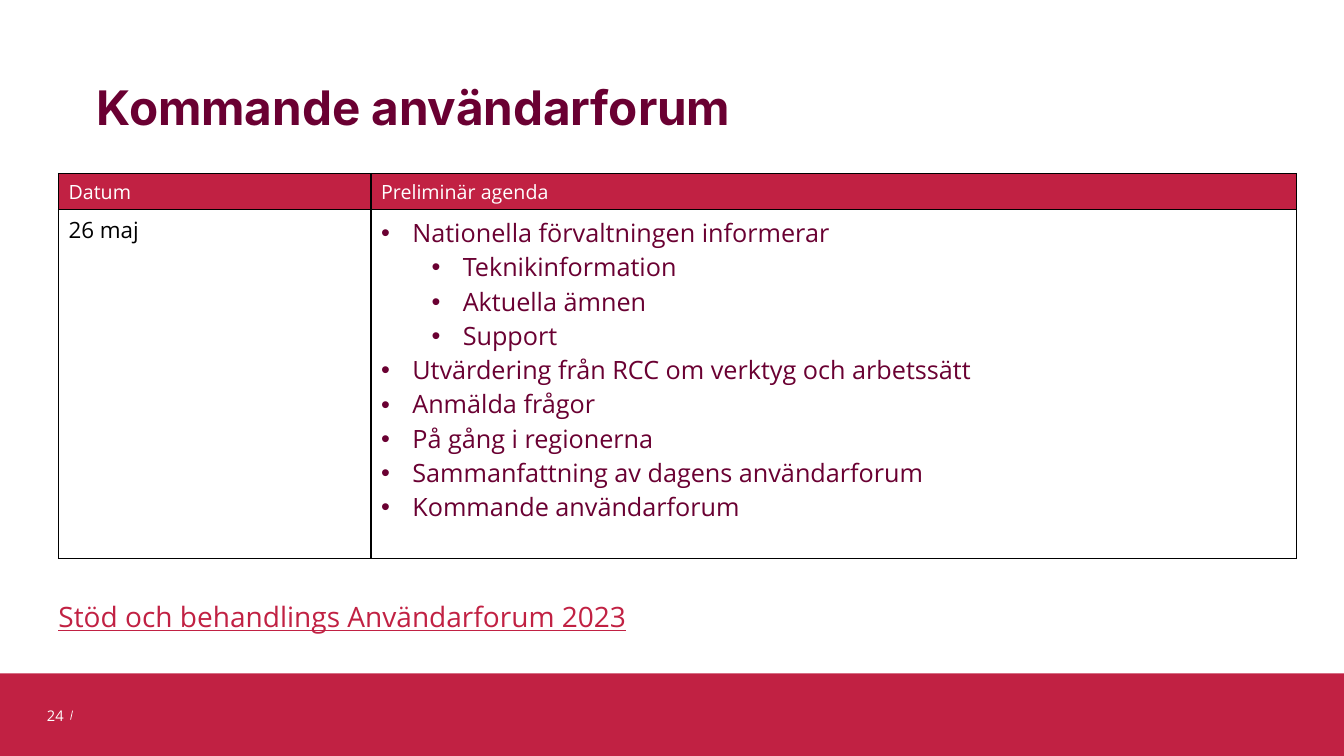
import dataclasses

import pptx
import pptx.dml.color
import pptx.enum.shapes
import pptx.enum.text
import pptx.oxml.ns
import pptx.util
from lxml import etree

Inches = pptx.util.Inches
Anchor = pptx.enum.text.MSO_ANCHOR
Align = pptx.enum.text.PP_ALIGN


@dataclasses.dataclass(frozen=True)
class Theme:
    red: str = "C12143"
    plum: str = "6A0032"
    black: str = "000000"
    white: str = "FFFFFF"
    heading_font: str = "Inter"
    body_font: str = "Open Sans"
    title_size: float = 34
    link_size: float = 20
    agenda_size: float = 18
    date_size: float = 16
    header_size: float = 14
    number_size: float = 10.5


THEME = Theme()
HEADERS = ["Datum", "Preliminär agenda"]
DATE = "26 maj"
AGENDA = [
    (0, "Nationella förvaltningen informerar"),
    (1, "Teknikinformation"),
    (1, "Aktuella ämnen"),
    (1, "Support"),
    (0, "Utvärdering från RCC om verktyg och arbetssätt"),
    (0, "Anmälda frågor"),
    (0, "På gång i regionerna"),
    (0, "Sammanfattning av dagens användarforum"),
    (0, "Kommande användarforum"),
]


def set_attributes(target, values):
    for name, value in values.items():
        setattr(target, name, value)


def color(value):
    return pptx.dml.color.RGBColor.from_string(value)


def add_xml(parent, tag, **attributes):
    return etree.SubElement(parent, pptx.oxml.ns.qn(tag), attributes)


def format_font(paragraph, size, font_color, **values):
    format_values = {"name": THEME.body_font, "size": pptx.util.Pt(size), "bold": False}
    for run in paragraph.runs:
        set_attributes(run.font, format_values | values)
        run.font.color.rgb = color(font_color)


def place(shape, left, top, width, height):
    lengths = {"left": left, "top": top, "width": width, "height": height}
    set_attributes(shape, {name: Inches(length) for name, length in lengths.items()})


def set_bullet(paragraph, margin, indent, character=None):
    """Set the hanging indent and the bullet; no character means no bullet."""
    properties = paragraph._p.get_or_add_pPr()
    properties.set("marL", str(Inches(margin)))
    properties.set("indent", str(Inches(indent)))
    if character:
        add_xml(properties, "a:buFont", typeface="Arial")
        add_xml(properties, "a:buChar", char=character)
    else:
        add_xml(properties, "a:buNone")


def fill_placeholder(shape, text, box, anchor, bottom_inset=0):
    place(shape, *box)
    set_attributes(shape.text_frame, {
        "text": text, "word_wrap": True, "vertical_anchor": anchor,
        "auto_size": pptx.enum.text.MSO_AUTO_SIZE.NONE,
        "margin_left": 0, "margin_right": 0, "margin_top": 0,
        "margin_bottom": Inches(bottom_inset),
    })
    paragraph = shape.text_frame.paragraphs[0]
    set_attributes(paragraph, {"alignment": Align.LEFT, "space_before": pptx.util.Pt(0)})
    return paragraph


def add_footer(slide, number):
    band = slide.shapes.add_shape(pptx.enum.shapes.MSO_SHAPE.RECTANGLE,
                                  0, Inches(6.68), Inches(13.33), Inches(0.82))
    band.shadow.inherit = False
    band.fill.solid()
    band.fill.fore_color.rgb = color(THEME.red)
    band.line.fill.background()

    slash = slide.shapes.add_connector(pptx.enum.shapes.MSO_CONNECTOR.STRAIGHT,
                                       Inches(0.72), Inches(7.05), Inches(0.7), Inches(7.14))
    slash.line.color.rgb = color(THEME.white)
    slash.line.width = pptx.util.Pt(0.5)
    add_xml(slash._element.spPr, "a:effectLst")

    box = slide.shapes.add_textbox(Inches(0.3), Inches(6.9), Inches(0.43), Inches(0.4))
    set_attributes(box.text_frame, {"text": number, "word_wrap": True,
                                    "vertical_anchor": Anchor.MIDDLE})
    paragraph = box.text_frame.paragraphs[0]
    paragraph.alignment = Align.RIGHT
    format_font(paragraph, THEME.number_size, THEME.white)


def style_cell(cell, fill_color):
    """Give the cell black borders on all sides and a plain fill."""
    properties = cell._tc.get_or_add_tcPr()
    for side in ("a:lnL", "a:lnR", "a:lnT", "a:lnB"):
        border = add_xml(properties, side, w=str(pptx.util.Pt(1)))
        add_xml(add_xml(border, "a:solidFill"), "a:srgbClr", val=THEME.black)
    cell.fill.solid()
    cell.fill.fore_color.rgb = color(fill_color)


def write_cell(cell, text, size, font_color):
    cell.text = text
    format_font(cell.text_frame.paragraphs[0], size, font_color)


def write_agenda(cell):
    set_attributes(cell, {"vertical_anchor": Anchor.TOP, "margin_top": Inches(0.06)})
    frame = cell.text_frame
    for index, (level, text) in enumerate(AGENDA):
        paragraph = frame.add_paragraph() if index else frame.paragraphs[0]
        set_attributes(paragraph, {"text": text, "level": level})
        set_bullet(paragraph, 0.31 + 0.5 * level, -0.31, "•")
        format_font(paragraph, THEME.agenda_size, THEME.plum)


def add_agenda_table(slide):
    frame = slide.shapes.add_table(2, 2, Inches(0.58), Inches(1.72), Inches(12.28), Inches(3.82))
    table = frame.table
    set_attributes(table, {"first_row": False, "horz_banding": False})
    for column, width in zip(table.columns, (3.1, 9.18)):
        column.width = Inches(width)
    for row, height, fill_color in zip(table.rows, (0.36, 3.46), (THEME.red, THEME.white)):
        row.height = Inches(height)
        for cell in row.cells:
            style_cell(cell, fill_color)
    for column, header in enumerate(HEADERS):
        write_cell(table.cell(0, column), header, THEME.header_size, THEME.white)
    write_cell(table.cell(1, 0), DATE, THEME.date_size, THEME.black)
    write_agenda(table.cell(1, 1))


def main():
    presentation = pptx.Presentation()
    set_attributes(presentation, {"slide_width": Inches(13.33), "slide_height": Inches(7.5)})
    slide = presentation.slides.add_slide(presentation.slide_layouts[1])

    title = fill_placeholder(slide.shapes.title, "Kommande användarforum",
                             (0.96, 0.09, 11.5, 1.26), Anchor.BOTTOM)
    title.line_spacing = 0.9
    format_font(title, THEME.title_size, THEME.plum, name=THEME.heading_font, bold=True)

    link = fill_placeholder(slide.placeholders[1], "Stöd och behandlings Användarforum 2023",
                            (0.58, 5.3, 11.5, 1.02), Anchor.BOTTOM, bottom_inset=0.04)
    set_bullet(link, 0, 0)
    format_font(link, THEME.link_size, THEME.red, underline=True)

    add_footer(slide, "24")
    add_agenda_table(slide)
    presentation.save("out.pptx")


if __name__ == "__main__":
    main()
